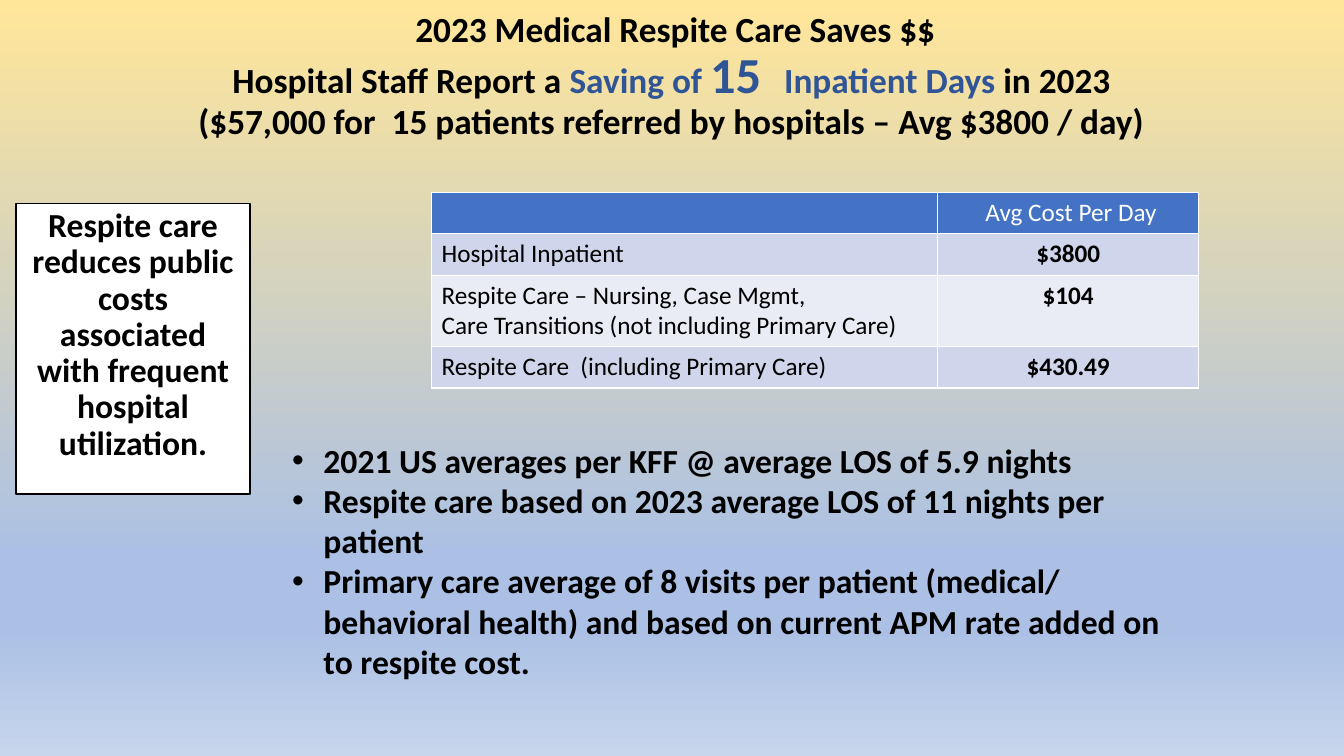
"""Build the slide on the savings from medical respite care."""
from copy import deepcopy

from pptx import Presentation
from pptx.dml.color import RGBColor
from pptx.enum import shapes, text
from pptx.oxml import ns, xmlchemy
from pptx.util import Inches, Pt

BLACK, WHITE, BLUE = "000000", "FFFFFF", "2F5597"
SKY = [(0, "FFE699"), (0.74, "ABC0E4"), (0.83, "ABC0E4"), (1, "C7D5ED")]
TITLE = [
    (" 2023 Medical Respite Care Saves $$\nHospital Staff Report a ", 25.2, BLACK),
    ("Saving of ", 25.2, BLUE),
    ("15  ", 36, BLUE),
    ("Inpatient Days ", 25.2, BLUE),
    ("in 2023\n($57,000 for  15 patients referred by hospitals – Avg $3800 / day)\n",
     25.2, BLACK),
]
CLAIM = "Respite care reduces public costs associated with frequent hospital utilization."
COSTS = [
    ("", " Avg Cost Per Day"),
    ("Hospital Inpatient", "$3800"),
    ("Respite Care – Nursing, Case Mgmt,\nCare Transitions (not including Primary Care)", "$104"),
    ("Respite Care  (including Primary Care)", "$430.49"),
]
WIDTHS = [5.02, 2.59]
HEIGHTS = [0.41, 0.41, 0.71, 0.41]
FILLS = ["4472C4", "CFD5EA", "E9EBF5", "CFD5EA"]
NOTES = [
    "2021 US averages per KFF @ average LOS of 5.9 nights",
    "Respite care based on 2023 average LOS of 11 nights per patient",
    "Primary care average of 8 visits per patient (medical/ behavioral health) "
    "and based on current APM rate added on to respite cost.",
]
CENTER = text.PP_ALIGN.CENTER


def paint(color, code):
    color.rgb = RGBColor.from_string(code)


def write(para, words, size, code=BLACK, bold=True):
    for i, line in enumerate(words.split("\n")):
        if i:
            para.add_line_break()
        if line:
            run = para.add_run()
            run.text = line
            run.font.name, run.font.size, run.font.bold = "Calibri", Pt(size), bold
            paint(run.font.color, code)


def add_sky(slide):
    fill = slide.background.fill
    fill.gradient()
    fill.gradient_angle = 270
    stops = slide.element.find(".//" + ns.qn("a:gsLst"))
    while len(stops) < len(SKY):
        stops.append(deepcopy(stops[0]))
    for stop, (place, code) in zip(fill.gradient_stops, SKY):
        stop.position = place
        paint(stop.color, code)


def add_title(slide):
    title = slide.shapes.title
    title.left, title.top = Inches(0.62), Inches(0.26)
    title.width, title.height = Inches(12.08), Inches(1.43)
    frame = title.text_frame
    frame.word_wrap = True
    frame.auto_size = text.MSO_AUTO_SIZE.NONE
    frame.vertical_anchor = text.MSO_ANCHOR.MIDDLE
    para = frame.paragraphs[0]
    para.alignment, para.line_spacing = CENTER, 0.9
    para.font.size = Pt(25.2)
    for words, size, code in TITLE:
        write(para, words, size, code)


def add_claim(slide):
    box = slide.shapes.add_shape(shapes.MSO_SHAPE.RECTANGLE, Inches(0.16), Inches(2.02),
                                 Inches(2.32), Inches(2.88))
    box.shadow.inherit = False
    box.fill.solid()
    paint(box.fill.fore_color, WHITE)
    paint(box.line.color, BLACK)
    box.line.width = Pt(1)
    frame = box.text_frame
    frame.word_wrap = True
    frame.vertical_anchor = text.MSO_ANCHOR.TOP
    para = frame.paragraphs[0]
    para.alignment, para.line_spacing = CENTER, 0.9
    write(para, CLAIM, 24)


def add_costs(slide):
    table = slide.shapes.add_table(len(COSTS), len(WIDTHS), Inches(4.28), Inches(1.91),
                                   Inches(sum(WIDTHS)), Inches(sum(HEIGHTS))).table
    for col, width in zip(table.columns, WIDTHS):
        col.width = Inches(width)
    for r, row in enumerate(COSTS):
        table.rows[r].height = Inches(HEIGHTS[r])
        for c, words in enumerate(row):
            cell = table.cell(r, c)
            cell.fill.solid()
            paint(cell.fill.fore_color, FILLS[r])
            frame = cell.text_frame
            for i, line in enumerate(words.split("\n")):
                para = frame.add_paragraph() if i else frame.paragraphs[0]
                if c:
                    para.alignment = CENTER
                write(para, line, 18, BLACK if r else WHITE, bool(r and c))


def add_notes(slide):
    box = slide.shapes.add_textbox(Inches(2.8), Inches(4.31), Inches(8.89), Inches(2.52))
    frame = box.text_frame
    frame.word_wrap = True
    for i, line in enumerate(NOTES):
        para = frame.add_paragraph() if i else frame.paragraphs[0]
        props = para._p.get_or_add_pPr()
        props.set("marL", str(Inches(0.31)))
        props.set("indent", str(-Inches(0.31)))
        for tag, key, value in (("a:buFont", "typeface", "Arial"), ("a:buChar", "char", "•")):
            mark = xmlchemy.OxmlElement(tag)
            mark.set(key, value)
            props.append(mark)
        write(para, line, 24)


def main():
    deck = Presentation()
    deck.slide_width, deck.slide_height = Inches(13.33), Inches(7.5)
    slide = deck.slides.add_slide(deck.slide_layouts[5])
    for add in (add_sky, add_title, add_claim, add_costs, add_notes):
        add(slide)
    deck.save("out.pptx")


if __name__ == "__main__":
    main()
